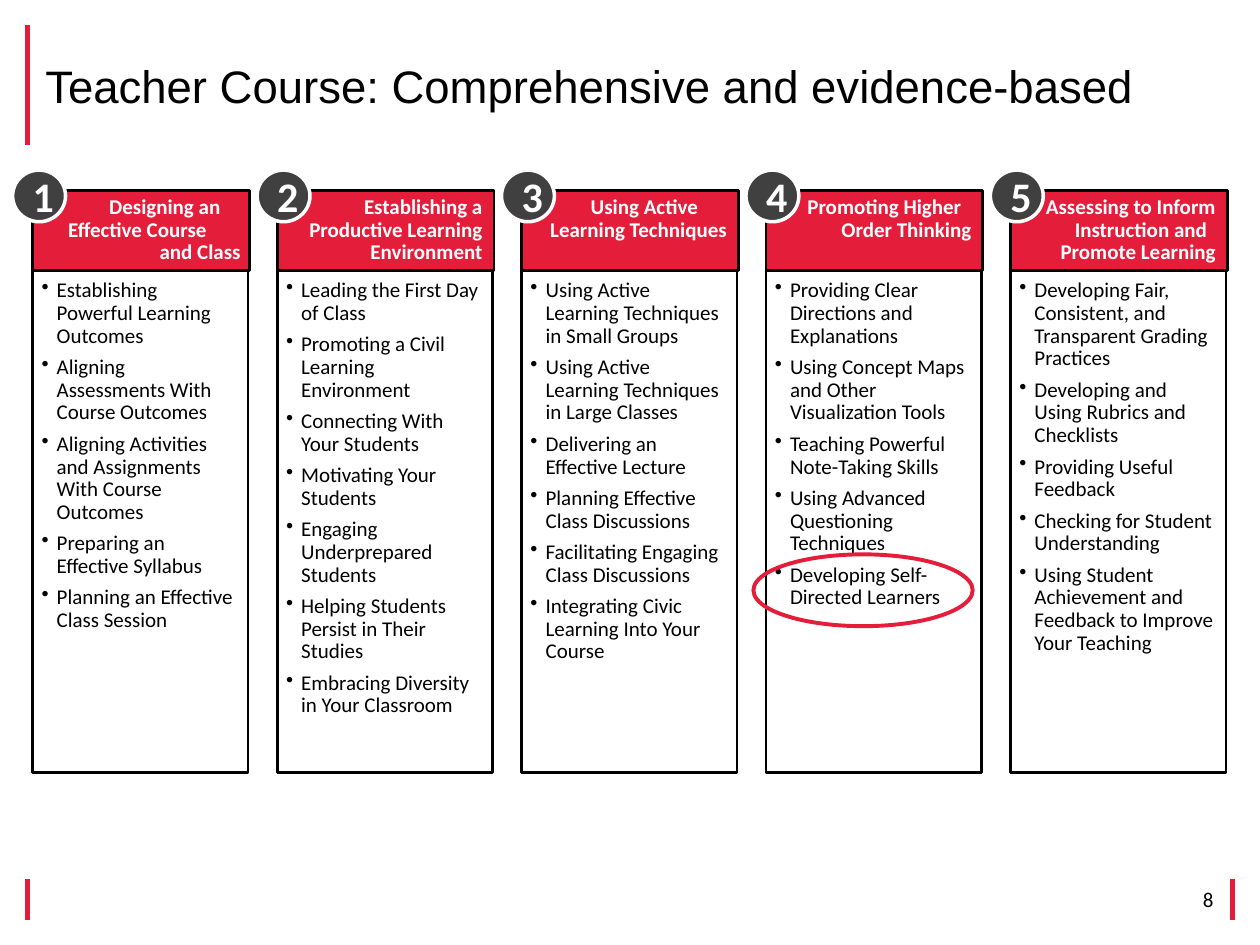
import pptx
import pptx.util
import pptx.dml.color
import pptx.enum.shapes
import pptx.enum.text
import pptx.oxml.ns
from lxml import etree

Inches, Pt = pptx.util.Inches, pptx.util.Pt
ALIGN = pptx.enum.text.PP_ALIGN
ANCHOR = pptx.enum.text.MSO_ANCHOR
SHAPE = pptx.enum.shapes.MSO_SHAPE
qn = pptx.oxml.ns.qn

COLORS = {"accent": "E51C39", "header": "E41D3A", "badge": "404040",
          "black": "000000", "white": "FFFFFF"}
TITLE = "Teacher Course: Comprehensive and evidence-based"
PAGE_NUMBER = "8"
MODULES = [
    {"header": [("Designing an", 0.16), ("Effective Course", 0.27), ("and Class", 0)],
     "right_inset": 0.07,
     "topics": ["Establishing Powerful Learning Outcomes",
                "Aligning Assessments With Course Outcomes",
                "Aligning Activities and Assignments With Course Outcomes",
                "Preparing an Effective Syllabus",
                "Planning an Effective Class Session"]},
    {"header": [("Establishing a", 0), ("Productive Learning", 0), ("Environment", 0)],
     "topics": ["Leading the First Day of Class",
                "Promoting a Civil Learning Environment",
                "Connecting With Your Students",
                "Motivating Your Students",
                "Engaging Underprepared Students",
                "Helping Students Persist in Their Studies",
                "Embracing Diversity in Your Classroom"]},
    {"header": [("Using Active", 0.23), ("Learning Techniques", 0)],
     "topics": ["Using Active Learning Techniques in Small Groups",
                "Using Active Learning Techniques in Large Classes",
                "Delivering an Effective Lecture",
                "Planning Effective Class Discussions",
                "Facilitating Engaging Class Discussions",
                "Integrating Civic Learning Into Your Course"]},
    {"header": [("Promoting Higher", 0.08), ("Order Thinking", 0)],
     "topics": ["Providing Clear Directions and Explanations",
                "Using Concept Maps and Other Visualization Tools",
                "Teaching Powerful Note-Taking Skills",
                "Using Advanced Questioning Techniques",
                "Developing Self-Directed Learners"]},
    {"header": [("Assessing to Inform", 0), ("Instruction and", 0.07), ("Promote Learning", 0)],
     "topics": ["Developing Fair, Consistent, and Transparent Grading Practices",
                "Developing and Using Rubrics and Checklists",
                "Providing Useful Feedback",
                "Checking for Student Understanding",
                "Using Student Achievement and Feedback to Improve Your Teaching"]},
]
ACCENT_LINES = [(0.22, 0.2, 1.15), (9.78, 6.98, 7.3), (0.22, 6.98, 7.3)]
COLUMN_LEFT, COLUMN_STEP = 0.26, 1.94
HEADER_TOP, HEADER_WIDTH, HEADER_HEIGHT = 1.51, 1.72, 0.64
BODY_WIDTH, BODY_HEIGHT = 1.71, 3.98


def rgb(name):
    return pptx.dml.color.RGBColor.from_string(COLORS[name])


def write(shape, lines, size=12, font="Calibri", color="black", bold=False,
          align=ALIGN.LEFT, anchor=ANCHOR.MIDDLE, insets=(0.1, 0.05, 0.1, 0.05),
          spacing=None, after=0, bullet=False, right_indents=()):
    frame = shape.text_frame
    frame.word_wrap = True
    frame.vertical_anchor = anchor
    (frame.margin_left, frame.margin_top,
     frame.margin_right, frame.margin_bottom) = map(Inches, insets)
    for index, line in enumerate(lines):
        paragraph = frame.add_paragraph() if index else frame.paragraphs[0]
        paragraph.text = line
        paragraph.alignment = align
        paragraph.line_spacing = spacing
        paragraph.space_after = Pt(after)
        properties = paragraph._p.get_or_add_pPr()
        if bullet:
            properties.set("marL", str(Inches(0.12)))
            properties.set("indent", str(-Inches(0.12)))
            etree.SubElement(properties, qn("a:buChar")).set("char", "•")
        if right_indents:
            properties.set("marR", str(Inches(right_indents[index])))
        paragraph.font.size = Pt(size)
        paragraph.font.name = font
        paragraph.font.bold = bold
        paragraph.font.color.rgb = rgb(color)


def add_shape(slide, kind, box, fill=None, line="black", width=1.5, alpha=None):
    shape = slide.shapes.add_shape(kind, *map(Inches, box))
    shape.shadow.inherit = False
    if fill:
        shape.fill.solid()
        shape.fill.fore_color.rgb = rgb(fill)
    else:
        shape.fill.background()
    if alpha:
        color = shape._element.spPr.find(qn("a:solidFill"))[0]
        etree.SubElement(color, qn("a:alpha")).set("val", str(alpha * 1000))
    shape.line.color.rgb = rgb(line)
    shape.line.width = Pt(width)
    return shape


def add_accent_line(slide, x, top, bottom):
    line = slide.shapes.add_connector(pptx.enum.shapes.MSO_CONNECTOR.STRAIGHT,
                                      Inches(x), Inches(top), Inches(x), Inches(bottom))
    line.line.color.rgb = rgb("accent")
    line.line.width = Pt(3)
    etree.SubElement(line._element.spPr, qn("a:effectLst"))


def add_module(slide, left, module):
    header = add_shape(slide, SHAPE.RECTANGLE,
                       (left, HEADER_TOP, HEADER_WIDTH, HEADER_HEIGHT), "header")
    lines, right_indents = zip(*module["header"])
    write(header, lines, color="white", bold=True, align=ALIGN.RIGHT, anchor=ANCHOR.TOP,
          insets=(0.09, 0.05, module.get("right_inset", 0.09), 0.05),
          spacing=0.9, right_indents=right_indents)
    body = add_shape(slide, SHAPE.RECTANGLE,
                     (left, HEADER_TOP + HEADER_HEIGHT, BODY_WIDTH, BODY_HEIGHT),
                     "white", alpha=90)
    write(body, module["topics"], anchor=ANCHOR.TOP, insets=(0.07, 0.07, 0.09, 0.1),
          spacing=0.9, after=5, bullet=True)


def main():
    presentation = pptx.Presentation()
    presentation.slide_width, presentation.slide_height = Inches(10), Inches(7.5)
    slide = presentation.slides.add_slide(presentation.slide_layouts[5])

    for accent_line in ACCENT_LINES:
        add_accent_line(slide, *accent_line)

    title = slide.shapes.title
    title.left, title.top, title.width, title.height = map(Inches, (0.26, 0.21, 9.48, 0.94))
    write(title, [TITLE], size=26, font="Arial")

    page_number = slide.shapes.add_textbox(*map(Inches, (7.4, 6.99, 2.33, 0.3)))
    write(page_number, [PAGE_NUMBER], align=ALIGN.RIGHT)

    for index, module in enumerate(MODULES):
        add_module(slide, COLUMN_LEFT + index * COLUMN_STEP, module)
    for index in range(len(MODULES)):
        left = COLUMN_LEFT - 0.16 + index * COLUMN_STEP
        badge = add_shape(slide, SHAPE.OVAL, (left, 1.35, 0.42, 0.41), "badge", "white", 2)
        write(badge, [str(index + 1)], size=24, color="white", bold=True, align=ALIGN.CENTER)

    add_shape(slide, SHAPE.OVAL, (5.98, 4.4, 1.74, 0.57), line="header", width=2.25)
    presentation.save("out.pptx")


if __name__ == "__main__":
    main()
